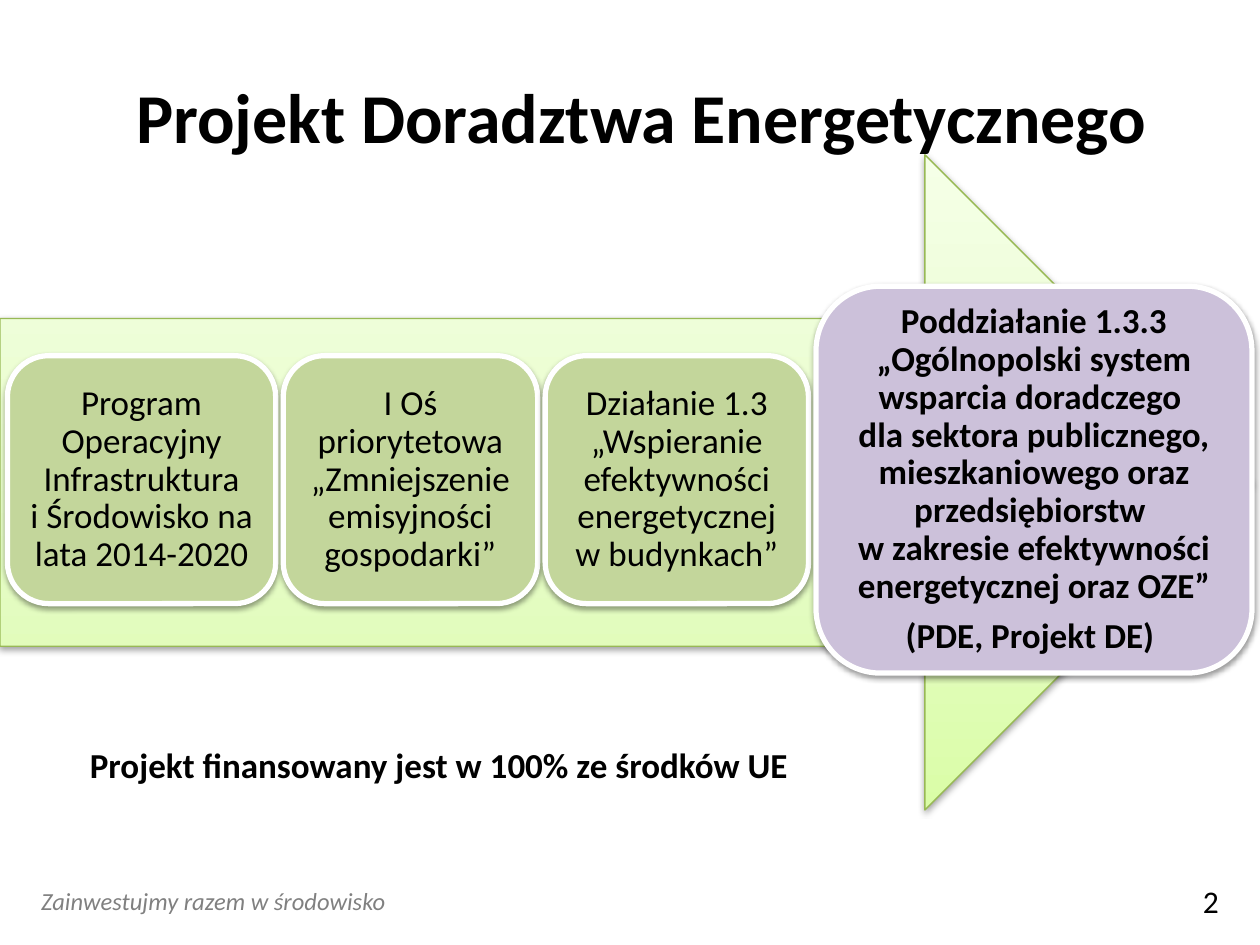
"""Build the slide on the energy advisory project."""
from copy import deepcopy
from dataclasses import dataclass

from lxml import etree
from pptx import Presentation
from pptx.dml.color import RGBColor
from pptx.enum.shapes import MSO_SHAPE
from pptx.enum.text import MSO_ANCHOR, MSO_AUTO_SIZE, PP_ALIGN
from pptx.oxml.ns import qn
from pptx.util import Cm, Pt

LEFT, CENTER = PP_ALIGN.LEFT, PP_ALIGN.CENTER
MIDDLE = MSO_ANCHOR.MIDDLE
FIXED = MSO_AUTO_SIZE.NONE
ROUNDED, ARROW = MSO_SHAPE.ROUNDED_RECTANGLE, MSO_SHAPE.RIGHT_ARROW
TITLE_ONLY = 5


@dataclass(frozen=True)
class Theme:
    """Colours, font and type sizes of the slide."""

    font: str = "Calibri"
    ink: str = "000000"
    muted: str = "808080"
    white: str = "FFFFFF"
    green: str = "C3D69B"
    violet: str = "CCC1DA"
    arrow_line: str = "98B955"
    arrow_stops: tuple = ((0, "DAFDA7"), (0.35, "E4FCC2"), (1, "F5FFE7"))
    title_size: int = 40
    body_size: int = 20
    number_size: int = 18
    footer_size: int = 14


class SlideBuilder:
    """Holds the theme and the current slide."""

    def __init__(self, deck, theme):
        """Add a slide with only a title to the deck."""
        self.theme = theme
        self.slide = deck.slides.add_slide(deck.slide_layouts[TITLE_ONLY])

    def add_text(self, para, text, size, bold=False, italic=False, color=None, align=LEFT):
        """Fill a paragraph run by run, breaking at line ends."""
        para.alignment = align
        for index, line in enumerate(text.split("\n")):
            if index:
                para.add_line_break()
            span = para.add_run()
            span.text = line
            span.font.name = self.theme.font
            span.font.size = Pt(size)
            span.font.bold = bold
            span.font.italic = italic
            span.font.color.rgb = RGBColor.from_string(color or self.theme.ink)

    def title(self, text, left, top, width, height):
        """Move and fill the title placeholder."""
        box = self.slide.shapes.title
        box.left, box.top, box.width, box.height = map(Cm, (left, top, width, height))
        frame = box.text_frame
        frame.auto_size = FIXED
        frame.vertical_anchor = MIDDLE
        self.add_text(frame.paragraphs[0], text, self.theme.title_size, bold=True)

    def label(self, text, left, top, width, height, size, **style):
        """Add a wrapping text box."""
        box = self.slide.shapes.add_textbox(*map(Cm, (left, top, width, height)))
        box.text_frame.word_wrap = True
        self.add_text(box.text_frame.paragraphs[0], text, size, **style)

    def shape(self, kind, left, top, width, height, line_color, line_width):
        """Add an outlined preset shape with a soft shadow below it."""
        shape = self.slide.shapes.add_shape(kind, *map(Cm, (left, top, width, height)))
        shape.line.color.rgb = RGBColor.from_string(line_color)
        shape.line.width = Pt(line_width)
        shape.shadow.inherit = False
        effects = shape._element.spPr.find(qn("a:effectLst"))
        shadow = etree.SubElement(effects, qn("a:outerShdw"), blurRad="40000",
                                  dist="20000", dir="5400000", rotWithShape="0")
        color = etree.SubElement(shadow, qn("a:srgbClr"), val=self.theme.ink)
        etree.SubElement(color, qn("a:alpha"), val="38000")
        return shape

    def arrow(self, left, top, width, height):
        """Add the background arrow with its upward gradient."""
        shape = self.shape(ARROW, left, top, width, height, self.theme.arrow_line, 0.75)
        shape.fill.gradient()
        shape.fill.gradient_angle = 90
        stops = shape._element.spPr.find(qn("a:gradFill")).find(qn("a:gsLst"))
        stops.append(deepcopy(stops[0]))
        for stop, (position, color) in zip(shape.fill.gradient_stops, self.theme.arrow_stops):
            stop.position = position
            stop.color.rgb = RGBColor.from_string(color)

    def card(self, texts, left, top, width, height, fill, bold):
        """Add a rounded card with one paragraph per text."""
        shape = self.shape(ROUNDED, left, top, width, height, self.theme.white, 3)
        shape.fill.solid()
        shape.fill.fore_color.rgb = RGBColor.from_string(fill)
        frame = shape.text_frame
        frame.word_wrap = True
        frame.vertical_anchor = MIDDLE
        frame.margin_left = frame.margin_right = Cm(0.1)
        frame.margin_top = frame.margin_bottom = Cm(0.1)
        for index, text in enumerate(texts):
            para = frame.add_paragraph() if index else frame.paragraphs[0]
            para.line_spacing = 0.9
            para.space_after = Pt(7)
            self.add_text(para, text, self.theme.body_size, bold=bold, align=CENTER)

    def card_row(self, cards, left, middle, gap):
        """Place cards side by side, centred on one height."""
        for texts, width, height, fill, bold in cards:
            self.card(texts, left, middle - height / 2, width, height, fill, bold)
            left += width + gap


def main():
    """Build and save the deck."""
    theme = Theme()
    deck = Presentation()
    deck.slide_width, deck.slide_height = Cm(25.4), Cm(19.05)
    page = SlideBuilder(deck, theme)
    page.label("Zainwestujmy razem w środowisko", 0.58, 17.73, 10.72, 0.86,
               theme.footer_size, italic=True, color=theme.muted)
    page.label("2", 24, 17.65, 1.4, 1.02, theme.number_size)
    page.arrow(0, 3.12, 25.25, 13.21)
    cards = [
        (["Program Operacyjny Infrastruktura\ni Środowisko na lata 2014-2020"],
         5.41, 5, theme.green, False),
        (["I Oś priorytetowa „Zmniejszenie emisyjności gospodarki”"],
         5.13, 5, theme.green, False),
        (["Działanie 1.3 „Wspieranie efektywności energetycznej\nw budynkach”"],
         5.31, 5, theme.green, False),
        (["Poddziałanie 1.3.3 „Ogólnopolski system wsparcia doradczego \n"
          "dla sektora publicznego, mieszkaniowego oraz przedsiębiorstw \n"
          "w zakresie efektywności energetycznej oraz OZE”",
          "(PDE, Projekt DE) "],
         8.79, 7.8, theme.violet, True),
    ]
    page.card_row(cards, left=0.15, middle=9.67, gap=0.15)
    page.title("Projekt Doradztwa Energetycznego", 2.49, 0.74, 21.16, 3.18)
    page.label("Projekt finansowany jest w 100% ze środków UE ", 0.13, 14.86, 17.6, 1.12,
               theme.body_size, bold=True, align=CENTER)
    deck.save("out.pptx")


if __name__ == "__main__":
    main()
